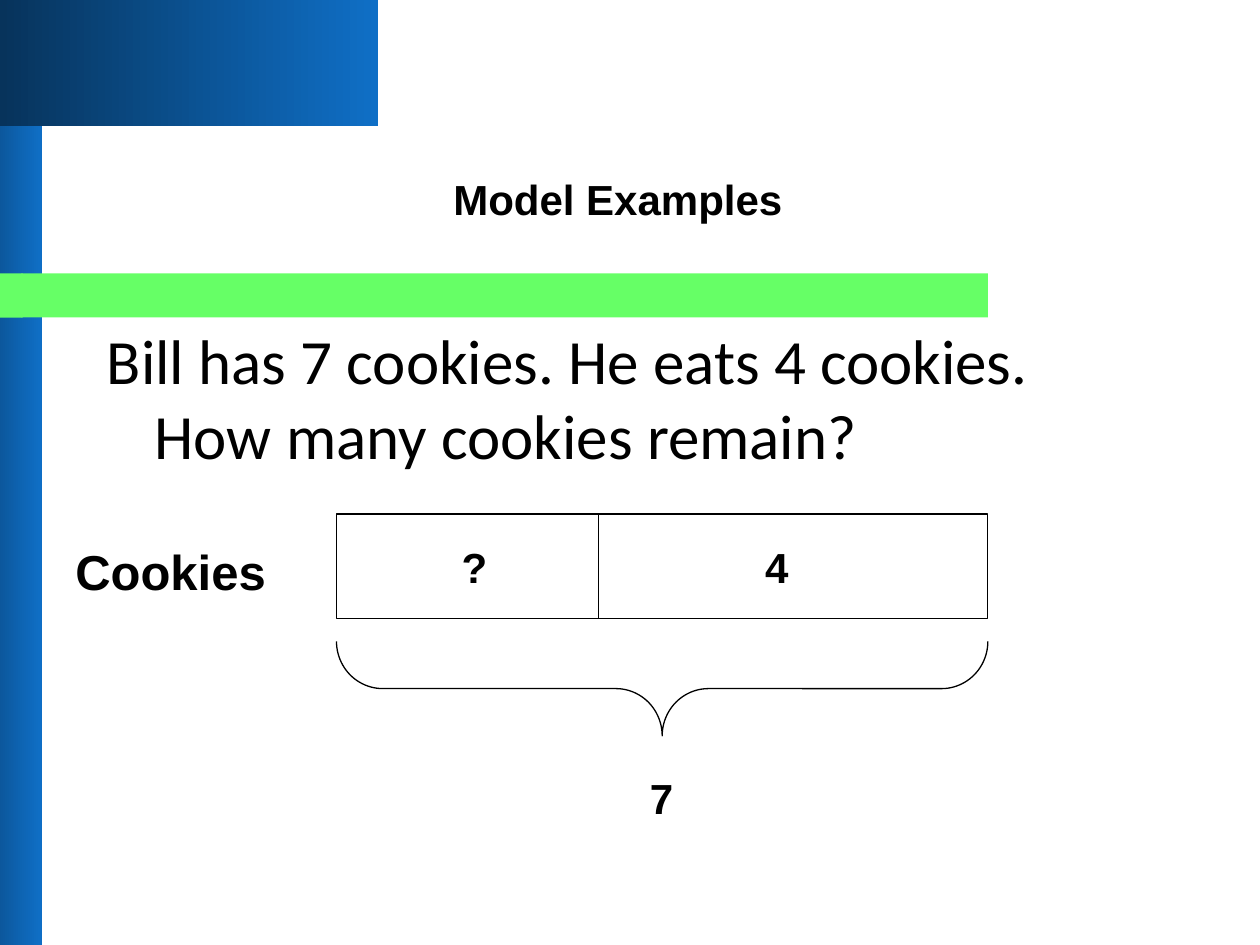
from dataclasses import dataclass

from pptx import Presentation
from pptx.dml.color import RGBColor
from pptx.enum.shapes import MSO_CONNECTOR, MSO_SHAPE
from pptx.enum.text import MSO_AUTO_SIZE, PP_ALIGN
from pptx.oxml.ns import qn
from pptx.shapes.autoshape import Shape
from pptx.util import Inches, Pt

RECTANGLE = MSO_SHAPE.RECTANGLE
DELAY = MSO_SHAPE.FLOWCHART_DELAY
BRACE = MSO_SHAPE.RIGHT_BRACE
STRAIGHT = MSO_CONNECTOR.STRAIGHT
LEFT, CENTER = PP_ALIGN.LEFT, PP_ALIGN.CENTER
FIT_SHAPE, NO_FIT = MSO_AUTO_SIZE.SHAPE_TO_FIT_TEXT, MSO_AUTO_SIZE.NONE


@dataclass(frozen=True)
class Theme:
    ink: RGBColor = RGBColor(0, 0, 0)
    navy: RGBColor = RGBColor(0x07, 0x33, 0x5B)
    blue: RGBColor = RGBColor(0x0F, 0x6F, 0xC6)
    green: RGBColor = RGBColor(0x66, 0xFF, 0x66)
    label_font: str = "Arial"
    body_font: str = "Calibri"
    label_size: float = 24
    row_size: float = 28
    body_size: float = 36
    line_width: float = 0.75


@dataclass(frozen=True)
class Box:
    left: float
    top: float
    width: float
    height: float

    def inches(self) -> tuple:
        return tuple(map(Inches, (self.left, self.top, self.width, self.height)))


@dataclass(frozen=True)
class Label:
    text: str
    box: Box
    size: float
    align: PP_ALIGN = CENTER
    wrap: bool = True


THEME = Theme()
BAR = Box(2.67, 4.08, 5.17, 0.83)
SPLIT_X = 4.75
BRACE_TOP, BRACE_DEPTH = 5.09, 0.75
BAND_TOP, BAND_HEIGHT = 2.17, 0.35

LABELS = (
    Label("4", Box(5.83, 4.25, 0.67, 0.5), THEME.label_size),
    Label("?", Box(3.56, 4.25, 0.41, 0.5), THEME.label_size, wrap=False),
    Label("7", Box(4.75, 6.08, 1, 0.5), THEME.label_size),
    Label("Cookies", Box(0.5, 4.25, 1.92, 0.57), THEME.row_size, LEFT),
    Label("Model Examples", Box(3.5, 1.33, 2.84, 0.5), THEME.label_size, LEFT, False),
)


def add_text(slide, text: str, box: Box, *, size: float, font: str = THEME.label_font,
             bold: bool = True, align: PP_ALIGN = LEFT, wrap: bool = True,
             hanging: float = 0, auto_size: MSO_AUTO_SIZE = FIT_SHAPE) -> None:
    frame = slide.shapes.add_textbox(*box.inches()).text_frame
    frame.word_wrap = wrap
    frame.auto_size = auto_size
    paragraph = frame.paragraphs[0]
    paragraph.alignment = align
    if hanging:
        properties = paragraph._p.get_or_add_pPr()
        properties.set("marL", str(Inches(hanging)))
        properties.set("indent", str(Inches(-hanging)))
    run = paragraph.add_run()
    run.text = text
    run.font.name, run.font.size, run.font.bold = font, Pt(size), bold
    run.font.color.rgb = THEME.ink


def fill_gradient(shape: Shape) -> None:
    """Fill from navy on the left to blue on the right, without an outline."""
    shape.shadow.inherit = False
    shape.line.fill.background()
    shape.fill.gradient()
    shape.fill.gradient_angle = 0
    for stop, position, color in zip(shape.fill.gradient_stops, (0, 1),
                                     (THEME.navy, THEME.blue)):
        stop.position = position
        stop.color.rgb = color


def add_band_part(slide, kind: MSO_SHAPE, left: float, width: float) -> Shape:
    box = Box(left, BAND_TOP, width, BAND_HEIGHT)
    part = slide.shapes.add_shape(kind, *box.inches())
    part.shadow.inherit = False
    part.fill.solid()
    part.fill.fore_color.rgb = THEME.green
    part.line.fill.background()
    return part


def add_outline(slide, kind: MSO_SHAPE, box: Box) -> Shape:
    shape = slide.shapes.add_shape(kind, *box.inches())
    shape.shadow.inherit = False
    shape.fill.background()
    shape.line.color.rgb = THEME.ink
    shape.line.width = Pt(THEME.line_width)
    return shape


def curve_points(*controls: tuple, steps: int = 8) -> list:
    """Sample a cubic curve, leaving out its first point."""
    def at(t: float, axis: int) -> float:
        weights = ((1 - t) ** 3, 3 * t * (1 - t) ** 2, 3 * t * t * (1 - t), t ** 3)
        return sum(w * point[axis] for w, point in zip(weights, controls))
    return [(at(i / steps, 0), at(i / steps, 1)) for i in range(1, steps + 1)]


def add_frame(slide) -> None:
    """Draw the blue side bar and corner with the green band over them."""
    fill_gradient(slide.shapes.add_shape(RECTANGLE, *Box(-0.5, 0, 0.83, 7.5).inches()))
    outline = [(3, 0.83), (0.66, 0.84), (0.61, 0.83), (0.53, 0.85)]
    outline += curve_points((0.53, 0.85), (0.5, 0.86), (0.46, 0.89), (0.43, 0.92))
    outline += curve_points((0.43, 0.92), (0.4, 0.95), (0.37, 1), (0.36, 1.04))
    outline += curve_points((0.36, 1.04), (0.34, 1.08), (0.34, 1.12), (0.33, 1.16))
    outline += [(0.33, 1.28), (0, 1.28), (0, 0)]
    corner = slide.shapes.build_freeform(3, 0, scale=Inches(1))
    corner.add_line_segments(outline, close=True)
    fill_gradient(corner.convert_to_shape())

    add_band_part(slide, RECTANGLE, 0.17, 7.67)
    band_end = add_band_part(slide, DELAY, -0.25, 0.43)
    band_end._element.spPr.find(qn("a:xfrm")).set("flipH", "1")


def add_bar_model(slide) -> None:
    add_outline(slide, RECTANGLE, BAR)
    divider = slide.shapes.add_connector(
        STRAIGHT, Inches(SPLIT_X), Inches(BAR.top),
        Inches(SPLIT_X), Inches(BAR.top + BAR.height))
    divider.line.color.rgb = THEME.ink
    divider.line.width = Pt(THEME.line_width)
    spPr = divider._element.spPr
    spPr.append(spPr.makeelement(qn("a:effectLst"), {}))

    center_x = BAR.left + BAR.width / 2
    center_y = BRACE_TOP + BRACE_DEPTH / 2
    brace = add_outline(slide, BRACE, Box(center_x - BRACE_DEPTH / 2,
                                          center_y - BAR.width / 2,
                                          BRACE_DEPTH, BAR.width))
    brace.rotation = 90
    brace.adjustments[0] = 0.49


def main() -> None:
    deck = Presentation()
    deck.slide_width, deck.slide_height = Inches(10), Inches(7.5)
    slide = deck.slides.add_slide(deck.slide_layouts[6])
    add_frame(slide)
    add_text(slide, "Bill has 7 cookies. He eats 4 cookies. How many cookies remain?",
             Box(0.75, 2.5, 8.5, 4.58), size=THEME.body_size, font=THEME.body_font,
             bold=False, hanging=0.38, auto_size=NO_FIT)
    add_bar_model(slide)
    for label in LABELS:
        add_text(slide, label.text, label.box, size=label.size,
                 align=label.align, wrap=label.wrap)
    deck.save("out.pptx")


if __name__ == "__main__":
    main()
